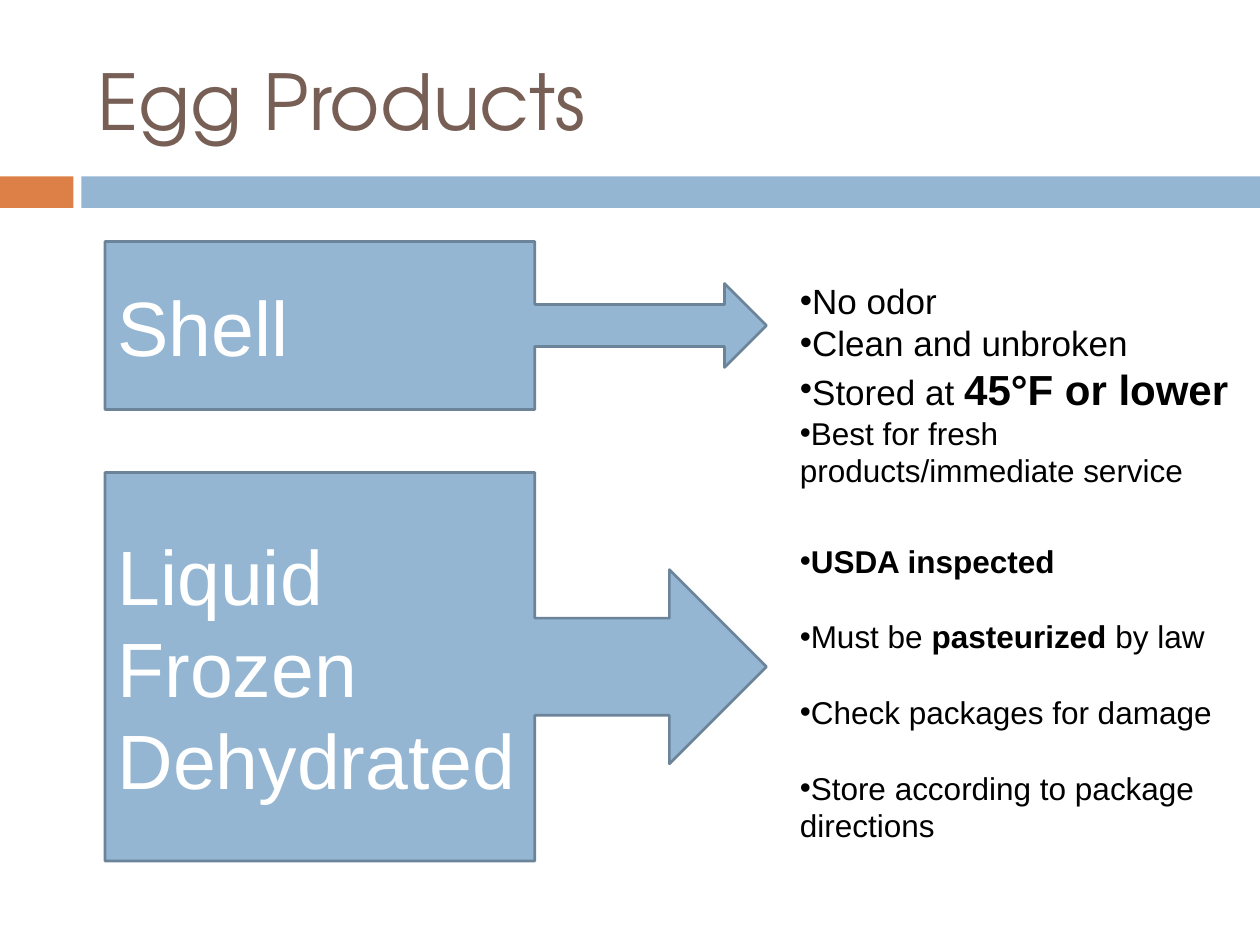
import pptx
import pptx.util
import pptx.dml.color
import pptx.enum.shapes
import pptx.enum.text
import pptx.oxml.ns
import lxml.etree

Pt = pptx.util.Pt
SHAPE = pptx.enum.shapes.MSO_SHAPE
ANCHOR = pptx.enum.text.MSO_ANCHOR

# Content: paragraphs are lists of (text, size name, bold) runs
TITLE = [[("Egg Products", "title", False)]]
CALLOUTS = [  # top, height, lines
    (270, 222, ["Liquid", "Frozen", "Dehydrated"]),
    (138, 96, ["Shell"]),
]
SHELL_NOTES = [
    [("No odor", "large", False)],
    [("Clean and unbroken", "large", False)],
    [("Stored at ", "large", False), ("45°F or lower", "key", True)],
    [("Best for fresh products/immediate service", "body", False)],
]
PROCESSED_NOTES = [
    [("USDA inspected", "body", True)],
    [("Must be ", "body", False), ("pasteurized", "body", True),
     (" by law", "body", False)],
    [("Check packages for damage", "body", False)],
    [("Store according to package directions", "body", False)],
]
THEME = {
    "blue": "94B6D2", "edge": "6C8499", "orange": "DD8047",
    "brown": "775F55", "white": "FFFFFF", "black": "000000",
    "title": 44, "callout": 44, "key": 24, "large": 20, "body": 18,
    "font": "Arial", "title_font": "TeX Gyre Adventor",
}


def color(name):
    return pptx.dml.color.RGBColor.from_string(THEME[name])


def add_bullet(p):
    pPr = p._p.get_or_add_pPr()
    pPr.set("marL", "0")
    pPr.set("indent", "0")
    for tag, key, value in [("a:buFont", "typeface", THEME["font"]),
                            ("a:buChar", "char", "•")]:
        lxml.etree.SubElement(pPr, pptx.oxml.ns.qn(tag)).set(key, value)


def write_text(sp, paragraphs, ink="black", font="font", anchor=ANCHOR.TOP,
               bullets=False, gap=0):
    tf = sp.text_frame
    tf.word_wrap = True
    tf.vertical_anchor = anchor
    for i, runs in enumerate(paragraphs):
        p = tf.paragraphs[0] if i == 0 else tf.add_paragraph()
        p.alignment = pptx.enum.text.PP_ALIGN.LEFT
        p.space_before = Pt(gap if i else 0)
        if bullets:
            add_bullet(p)
        for text, size, bold in runs:
            r = p.add_run()
            r.text = text
            r.font.name = THEME[font]
            r.font.size = Pt(THEME[size])
            r.font.bold = bold
            r.font.color.rgb = color(ink)


def add_shape(s, kind, box, fill, line=None):
    sp = s.shapes.add_shape(kind, *map(Pt, box))
    sp.shadow.inherit = False
    sp.fill.solid()
    sp.fill.fore_color.rgb = color(fill)
    if line:
        sp.line.color.rgb = color(line)
        sp.line.width = Pt(1.5)
    else:
        sp.line.fill.background()
    return sp


def add_text(s, box, paragraphs, **style):
    write_text(s.shapes.add_textbox(*map(Pt, box)), paragraphs, **style)


def main():
    prs = pptx.Presentation()
    prs.slide_width, prs.slide_height = Pt(720), Pt(540)
    s = prs.slides.add_slide(prs.slide_layouts[6])

    # Header band and title
    for left, width, fill in [(0, 42, "orange"), (46.5, 673.5, "blue")]:
        add_shape(s, SHAPE.RECTANGLE, (left, 100.8, width, 18), fill)
    add_text(s, (48.5, 18, 642, 78), TITLE, ink="brown", font="title_font",
             anchor=ANCHOR.MIDDLE)

    # Arrow callouts
    for top, height, lines in CALLOUTS:
        sp = add_shape(s, SHAPE.RIGHT_ARROW_CALLOUT, (60, top, 378, height),
                       "blue", "edge")
        write_text(sp, [[(line, "callout", False)] for line in lines],
                   ink="white", anchor=ANCHOR.MIDDLE)

    # Bulleted notes
    add_text(s, (450, 156, 270, 172), SHELL_NOTES, bullets=True)
    add_text(s, (450, 306, 252, 181.5), PROCESSED_NOTES, bullets=True,
             gap=21.6)

    prs.save("out.pptx")


if __name__ == "__main__":
    main()
